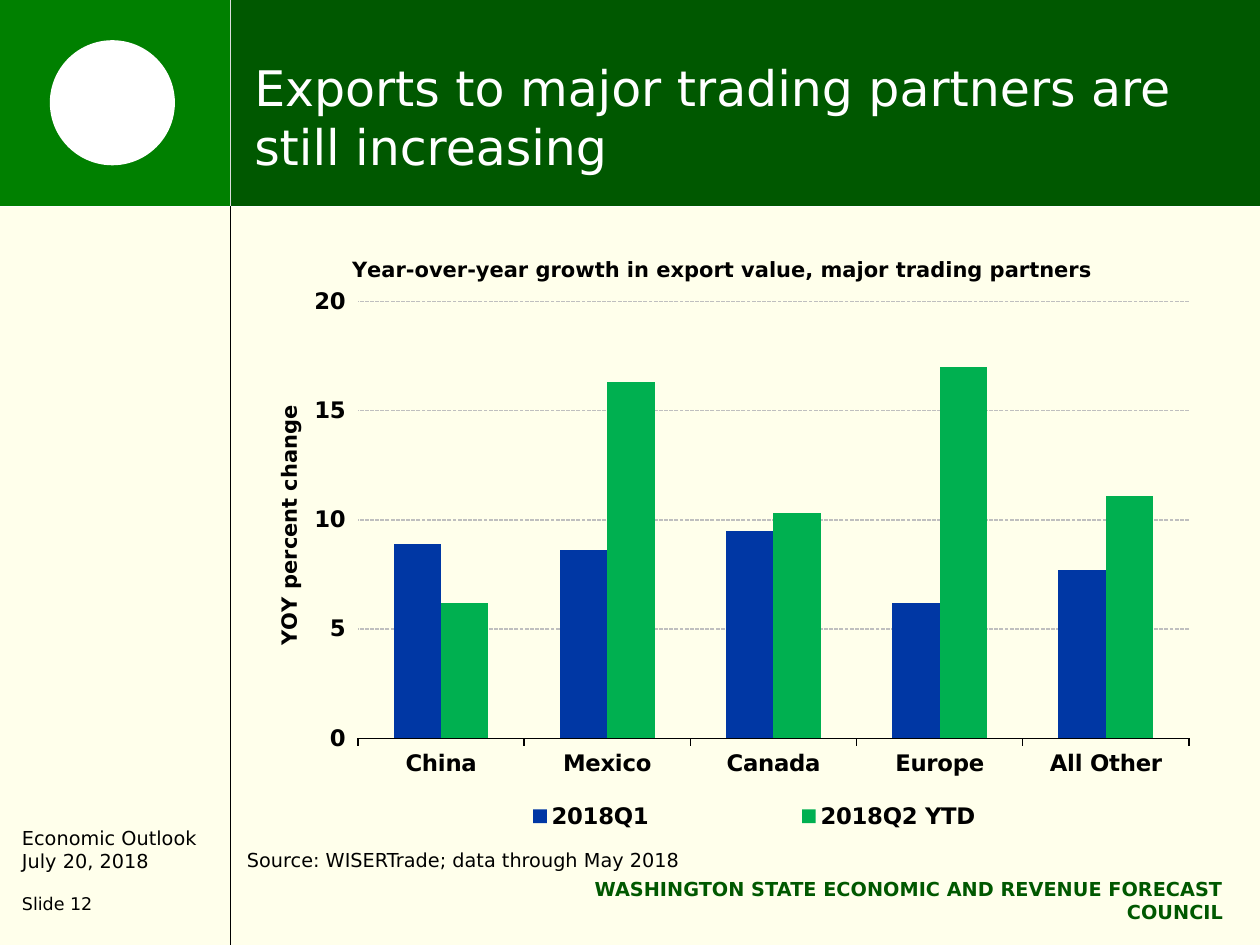
from lxml.etree import SubElement
from pptx import Presentation
from pptx.chart.data import CategoryChartData
from pptx.dml.color import RGBColor
from pptx.enum.chart import XL_CHART_TYPE, XL_LEGEND_POSITION, XL_TICK_LABEL_POSITION, XL_TICK_MARK
from pptx.enum.dml import MSO_LINE
from pptx.enum.shapes import MSO_CONNECTOR, MSO_SHAPE
from pptx.enum.text import MSO_ANCHOR, PP_ALIGN
from pptx.oxml import parse_xml
from pptx.oxml.ns import nsdecls, qn
from pptx.util import Pt

FONT = "DejaVu Sans"
COLORS = {
    "background": "FFFFEB",
    "banner": "005800",
    "corner": "008000",
    "white": "FFFFFF",
    "black": "000000",
    "divider": "DDDDDD",
    "grid": "BFBFBF",
    "first_quarter": "0037A4",
    "second_quarter": "00B050",
}
WIDTH, HEIGHT = 720, 540
SIDEBAR, BANNER = 131.75, 118


def color(name):
    return RGBColor.from_string(COLORS[name])


def style_font(font, size, color_name="black", bold=False):
    font.name = FONT
    font.size = Pt(size)
    font.bold = bold
    font.color.rgb = color(color_name)


def add_block(slide, kind, left, top, width, height, fill):
    shape = slide.shapes.add_shape(kind, Pt(left), Pt(top), Pt(width), Pt(height))
    shape.shadow.inherit = False
    shape.fill.solid()
    shape.fill.fore_color.rgb = color(fill)
    shape.line.fill.background()


def add_rule(slide, start, end, color_name):
    line = slide.shapes.add_connector(MSO_CONNECTOR.STRAIGHT, *map(Pt, start + end))
    line.line.color.rgb = color(color_name)
    line.line.width = Pt(0.75)
    SubElement(line._element.spPr, qn("a:effectLst"))


def add_text(slide, box, lines, color_name="black", bold=False,
             align=PP_ALIGN.LEFT, anchor=MSO_ANCHOR.TOP):
    """Add a text box; each line is (text, size, space before)."""
    text_frame = slide.shapes.add_textbox(*map(Pt, box)).text_frame
    text_frame.word_wrap = True
    text_frame.vertical_anchor = anchor
    text_frame.text = "\n".join(text for text, _, _ in lines)
    for paragraph, (_, size, space_before) in zip(text_frame.paragraphs, lines):
        paragraph.alignment = align
        if space_before:
            paragraph.space_before = Pt(space_before)
        for run in paragraph.runs:
            style_font(run.font, size, color_name, bold)


def set_layout(element, index, **settings):
    """Give a chart part a manual layout, placed as child number index."""
    for old_layout in element.findall(qn("c:layout")):
        element.remove(old_layout)
    values = "".join(f'<c:{key} val="{value}"/>' for key, value in settings.items())
    element.insert(index, parse_xml(
        f'<c:layout {nsdecls("c")}><c:manualLayout>{values}</c:manualLayout></c:layout>'))


def set_title(title, text, x, y):
    title.text_frame.text = text
    for run in title.text_frame.paragraphs[0].runs:
        style_font(run.font, 12, bold=True)
    set_layout(title._element, 1, xMode="edge", yMode="edge", x=x, y=y)


def style_axes(chart):
    category_axis, value_axis = chart.category_axis, chart.value_axis
    for axis in (category_axis, value_axis):
        axis.major_tick_mark = XL_TICK_MARK.OUTSIDE
        style_font(axis.tick_labels.font, 13, bold=True)
    category_axis.tick_label_position = XL_TICK_LABEL_POSITION.LOW
    category_axis.format.line.color.rgb = color("black")
    category_axis.format.line.width = Pt(0.75)

    value_axis.minimum_scale, value_axis.maximum_scale = 0, 20
    value_axis.major_unit = 5
    value_axis.format.line.fill.background()
    grid_line = value_axis.major_gridlines.format.line
    grid_line.color.rgb = color("grid")
    grid_line.width = Pt(0.75)
    grid_line.dash_style = MSO_LINE.SQUARE_DOT
    set_title(value_axis.axis_title, "YOY percent change", 0.03, 0.29)


def add_export_chart(slide):
    data = CategoryChartData()
    data.categories = ["China", "Mexico", "Canada", "Europe", "All Other"]
    data.add_series("2018Q1", [8.9, 8.6, 9.5, 6.2, 7.7])
    data.add_series("2018Q2 YTD", [6.2, 16.3, 10.3, 17, 11.1])
    chart = slide.shapes.add_chart(XL_CHART_TYPE.COLUMN_CLUSTERED, Pt(138.25), Pt(126),
                                   Pt(552.25), Pt(356.5), data).chart
    style_font(chart.font, 18)
    set_title(chart.chart_title, "Year-over-year growth in export value, major trading partners",
              0.11, 0.05)
    style_axes(chart)

    plot = chart.plots[0]
    plot.gap_width, plot.overlap = 150, 0
    plot.vary_by_categories = False
    for series, fill in zip(plot.series, ("first_quarter", "second_quarter")):
        series.invert_if_negative = False
        series.format.fill.solid()
        series.format.fill.fore_color.rgb = color(fill)
    set_layout(chart._chartSpace.chart.plotArea, 0, layoutTarget="inner", xMode="edge",
               yMode="edge", x=0.12, y=0.13, w=0.86, h=0.7)

    chart.has_legend = True
    legend = chart.legend
    legend.position = XL_LEGEND_POSITION.BOTTOM
    legend.include_in_layout = False
    style_font(legend.font, 13, bold=True)
    set_layout(legend._element, 1, xMode="edge", yMode="edge", x=0.15, y=0.92, w=0.76, h=0.07)


def main():
    presentation = Presentation()
    presentation.slide_width, presentation.slide_height = Pt(WIDTH), Pt(HEIGHT)
    slide = presentation.slides.add_slide(presentation.slide_layouts[6])
    slide.background.fill.solid()
    slide.background.fill.fore_color.rgb = color("background")

    add_block(slide, MSO_SHAPE.RECTANGLE, SIDEBAR, 0, WIDTH - SIDEBAR, BANNER, "banner")
    add_block(slide, MSO_SHAPE.RECTANGLE, 0, 0, SIDEBAR, BANNER, "corner")
    add_text(slide, (5.5, 468.5, 130, 58),
             [("Economic Outlook", 11, 0), ("July 20, 2018", 11, 0), ("Slide 12", 10, 12)])
    add_rule(slide, (SIDEBAR, 0), (SIDEBAR, HEIGHT), "divider")
    add_text(slide, (274, 498, 432, 28),
             [("WASHINGTON STATE ECONOMIC AND REVENUE FORECAST COUNCIL", 11, 0)],
             "banner", bold=True, align=PP_ALIGN.RIGHT)
    add_rule(slide, (0, BANNER), (WIDTH, BANNER), "white")
    add_rule(slide, (SIDEBAR, BANNER), (SIDEBAR, HEIGHT), "black")
    add_block(slide, MSO_SHAPE.OVAL, 28.5, 23, 71.5, 71.5, "white")

    add_text(slide, (138.25, 21.5, 552.25, 90),
             [("Exports to major trading partners are still increasing", 28, 0)],
             "white", anchor=MSO_ANCHOR.MIDDLE)
    add_export_chart(slide)
    add_text(slide, (134, 481, 369.5, 21),
             [("Source: WISERTrade; data through May 2018", 11, 0)])
    presentation.save("out.pptx")


if __name__ == "__main__":
    main()
